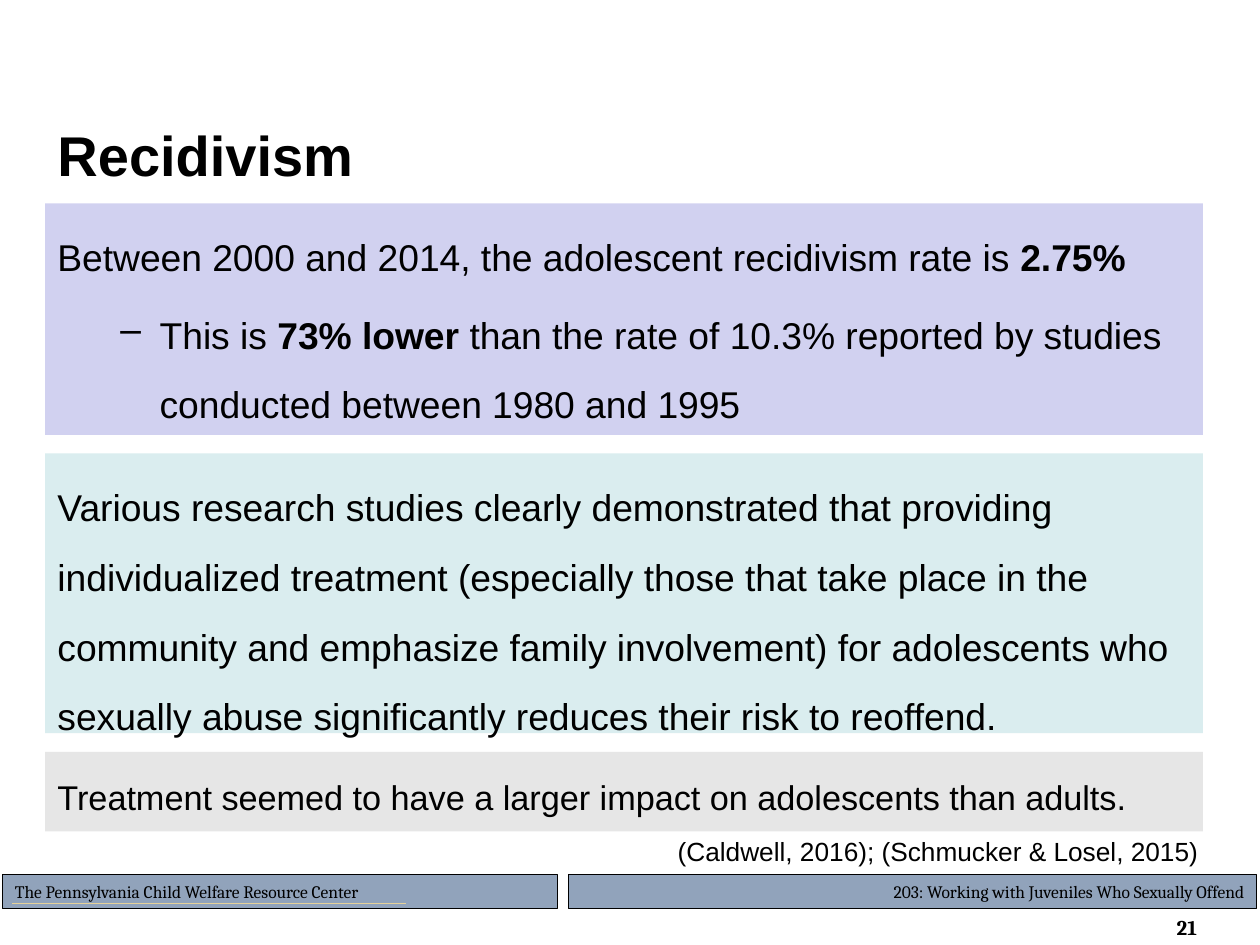
from dataclasses import dataclass

from lxml import etree
from pptx import Presentation
from pptx.dml.color import RGBColor
from pptx.enum.shapes import MSO_CONNECTOR, MSO_SHAPE
from pptx.enum.text import MSO_ANCHOR, PP_ALIGN
from pptx.oxml.ns import qn
from pptx.util import Cm, Pt

LEFT, RIGHT = PP_ALIGN.LEFT, PP_ALIGN.RIGHT
TOP, MIDDLE = MSO_ANCHOR.TOP, MSO_ANCHOR.MIDDLE
RECTANGLE = MSO_SHAPE.RECTANGLE
STRAIGHT = MSO_CONNECTOR.STRAIGHT


@dataclass(frozen=True)
class Theme:
    ink: str = "000000"
    lavender: str = "D1D1F0"
    aqua: str = "DAEDEF"
    grey: str = "E6E6E6"
    footer: str = "91A3BB"
    gold: str = "E5D199"
    body_font: str = "Arial"
    footer_font: str = "Cambria"
    title_size: float = 32
    body_size: float = 21.3
    impact_size: float = 19.6
    citation_size: float = 15
    number_size: float = 12
    footer_size: float = 10


THEME = Theme()
PANEL_LEFT, PANEL_WIDTH = 0.91, 23.34
FOOTER_TOP, FOOTER_HEIGHT = 17.63, 0.69


def color(value):
    return RGBColor.from_string(value)


def add_panel(slide, left, top, width, height, fill, border=None):
    panel = slide.shapes.add_shape(RECTANGLE, Cm(left), Cm(top), Cm(width), Cm(height))
    panel.shadow.inherit = False
    panel.fill.solid()
    panel.fill.fore_color.rgb = color(fill)
    if border:
        panel.line.color.rgb = color(THEME.ink)
        panel.line.width = Pt(border)
    else:
        panel.line.fill.background()
    return panel


def add_box(slide, left, top, width, height):
    return slide.shapes.add_textbox(Cm(left), Cm(top), Cm(width), Cm(height))


def add_dash(paragraph):
    properties = paragraph._p.get_or_add_pPr()
    properties.set("marL", str(Cm(2.06)))
    properties.set("indent", str(Cm(-0.79)))
    etree.SubElement(properties, qn("a:buChar")).set("char", "–")


def write(holder, *paragraphs, size, font=THEME.body_font, bold=False,
          align=LEFT, anchor=TOP, spacing=1.0, gap=4.3):
    """Each paragraph is a string or a list of (text, bold) runs; later ones are dashed."""
    frame = holder.text_frame
    frame.word_wrap = True
    frame.vertical_anchor = anchor
    for index, content in enumerate(paragraphs):
        paragraph = frame.add_paragraph() if index else frame.paragraphs[0]
        paragraph.alignment = align
        paragraph.line_spacing = spacing
        if index:
            paragraph.space_before = Pt(gap)
            add_dash(paragraph)
        runs = [(content, bold)] if isinstance(content, str) else content
        for text, strong in runs:
            run = paragraph.add_run()
            run.text = text
            run.font.name = font
            run.font.size = Pt(size)
            run.font.bold = strong
            run.font.color.rgb = color(THEME.ink)


def add_rule(slide, left, right, height):
    rule = slide.shapes.add_connector(STRAIGHT, Cm(left), Cm(height), Cm(right), Cm(height))
    rule.line.color.rgb = color(THEME.gold)
    rule.line.width = Pt(0.75)
    etree.SubElement(rule._element.spPr, qn("a:effectLst"))


def add_footer(slide):
    bars = [
        (11.46, 13.87, 0.75, RIGHT, "203: Working with Juveniles Who Sexually Offend"),
        (0.05, 11.18, 0.5, LEFT, "The Pennsylvania Child Welfare Resource Center"),
    ]
    for left, width, border, align, label in bars:
        bar = add_panel(slide, left, FOOTER_TOP, width, FOOTER_HEIGHT, THEME.footer, border)
        write(bar, label, size=THEME.footer_size, font=THEME.footer_font, align=align)
    add_rule(slide, 0.25, 8.18, 18.21)
    write(add_box(slide, 22.38, 18.31, 2, 0.76), "21", size=THEME.number_size,
          font=THEME.footer_font, bold=True, align=RIGHT)


def add_findings(slide):
    rates = [
        [("Between 2000 and 2014, the adolescent recidivism rate is ", False), ("2.75%", True)],
        [("This is ", False), ("73% lower ", True),
         ("than the rate of 10.3% reported by studies conducted between 1980 and 1995", False)],
    ]
    treatment = [
        "Various research studies clearly demonstrated that providing individualized "
        "treatment (especially those that take place in the community and emphasize "
        "family involvement) for adolescents who sexually abuse significantly reduces "
        "their risk to reoffend."
    ]
    impact = ["Treatment seemed to have a larger impact on adolescents than adults."]
    findings = [
        (4.1, 4.67, THEME.lavender, THEME.body_size, 1.56, rates),
        (9.14, 5.64, THEME.aqua, THEME.body_size, 1.56, treatment),
        (15.16, 1.6, THEME.grey, THEME.impact_size, 1.45, impact),
    ]
    for top, height, fill, size, spacing, paragraphs in findings:
        panel = add_panel(slide, PANEL_LEFT, top, PANEL_WIDTH, height, fill)
        write(panel, *paragraphs, size=size, spacing=spacing)


def main():
    deck = Presentation()
    deck.slide_width, deck.slide_height = Cm(25.4), Cm(19.05)
    slide = deck.slides.add_slide(deck.slide_layouts[6])
    add_footer(slide)
    write(add_box(slide, PANEL_LEFT, 2.29, 22.86, 1.65), "Recidivism",
          size=THEME.title_size, bold=True, anchor=MIDDLE)
    add_findings(slide)
    write(add_box(slide, 13.41, 16.71, 11.99, 2.34),
          "(Caldwell, 2016); (Schmucker & Losel, 2015)", size=THEME.citation_size)
    deck.save("out.pptx")


if __name__ == "__main__":
    main()
